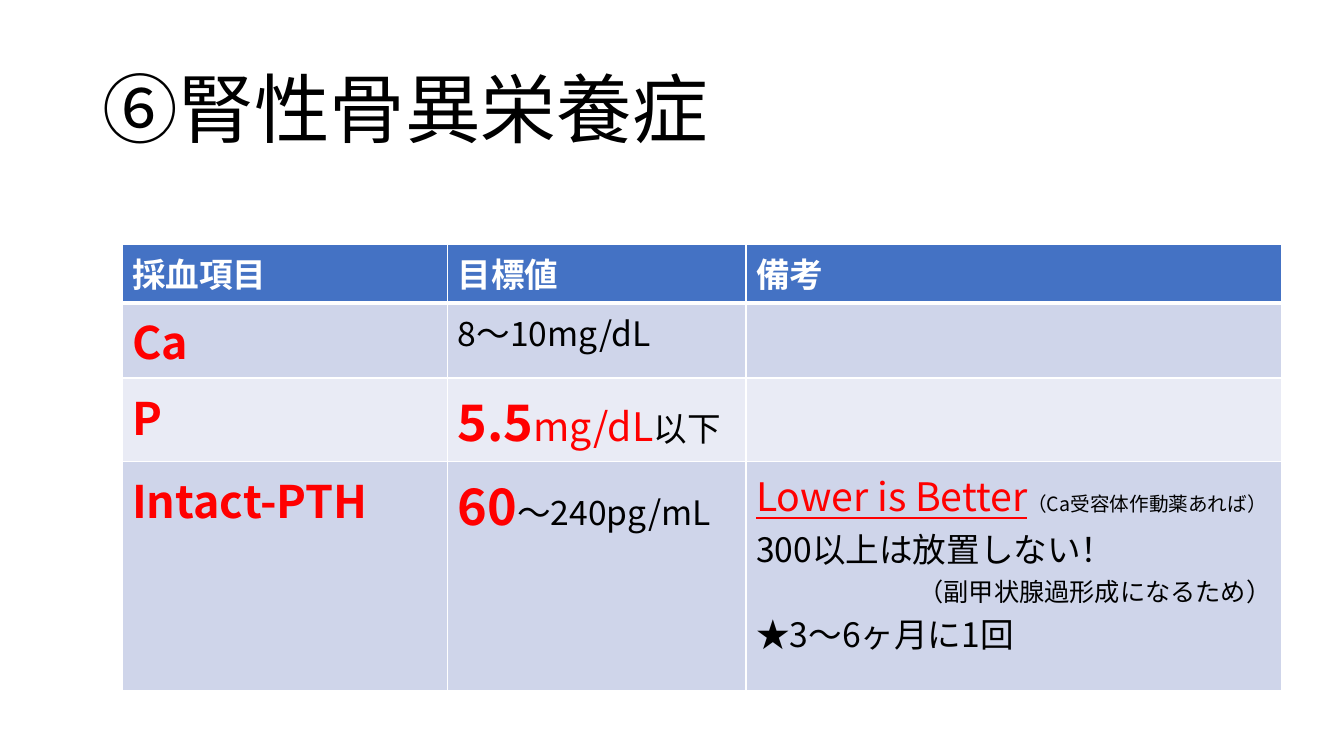
from lxml import etree
from pptx import Presentation
from pptx.dml.color import RGBColor
from pptx.enum.text import MSO_ANCHOR, MSO_AUTO_SIZE, PP_ALIGN
from pptx.oxml.ns import qn
from pptx.util import Emu, Pt

LEFT, RIGHT = PP_ALIGN.LEFT, PP_ALIGN.RIGHT
MIDDLE = MSO_ANCHOR.MIDDLE
NO_FIT = MSO_AUTO_SIZE.NONE
TITLE_ONLY = 5

PX = 9144  # 100 px to the inch
FONT = "Noto Sans CJK JP"
BLACK, WHITE, RED = "000000", "FFFFFF", "FF0000"
HEADER_FILL, BAND_FILLS = "4472C4", ("CFD5EA", "E9EBF5")

# Text formats
HEAD = dict(size=24, color=WHITE, bold=True)
ITEM = dict(size=32, color=RED, bold=True)
VALUE = dict(size=36, color=RED, bold=True)
UNIT = dict(size=28, color=RED)
SLOGAN = dict(size=28, color=RED, underline=True)
PLAIN = dict(size=24)
SMALL = dict(size=18)
TINY = dict(size=14)

# A cell is a list of paragraphs: (alignment, [(text, format), ...])
COLUMNS = (323, 296, 531)
ROWS = (58, 74, 83, 227)
CELLS = [
    [[(LEFT, [(name, HEAD)])] for name in ("採血項目", "目標値", "備考")],
    [[(LEFT, [("Ca", ITEM)])],
     [(LEFT, [("8〜10mg/dL", PLAIN)])],
     []],
    [[(LEFT, [("P", ITEM)])],
     [(LEFT, [("5.5", VALUE), ("mg/dL", UNIT), ("以下", PLAIN)])],
     []],
    [[(LEFT, [("Intact-PTH", ITEM)])],
     [(LEFT, [("60", VALUE), ("〜240pg/mL", PLAIN)])],
     [(LEFT, [("Lower is Better", SLOGAN), ("（Ca受容体作動薬あれば）", TINY)]),
      (LEFT, [("300以上は放置しない！", PLAIN)]),
      (RIGHT, [("（副甲状腺過形成になるため）", SMALL)]),
      (LEFT, [("★3〜6ヶ月に1回", PLAIN)])]],
]


def px(n):
    return Emu(n * PX)


def rgb(value):
    return RGBColor.from_string(value)


def add_run(p, text, size, color=BLACK, bold=False, underline=False):
    r = p.add_run()
    r.text = text
    formats = dict(name=FONT, size=Pt(size), bold=bold, underline=underline)
    for key, value in formats.items():
        setattr(r.font, key, value)
    r.font.color.rgb = rgb(color)
    ea = etree.SubElement(r.font._element, qn("a:ea"))
    ea.set("typeface", FONT)


def add_title(s, text, left, top, width, height):
    sp = s.shapes.title
    box = dict(left=left, top=top, width=width, height=height)
    for key, value in box.items():
        setattr(sp, key, px(value))
    tf = sp.text_frame
    for key, value in dict(auto_size=NO_FIT, vertical_anchor=MIDDLE, word_wrap=True).items():
        setattr(tf, key, value)
    p = tf.paragraphs[0]
    p.alignment, p.line_spacing = LEFT, 0.9
    add_run(p, text, 54)


def set_borders(cell, **widths):
    tcPr = cell._tc.get_or_add_tcPr()
    for side, width in widths.items():
        ln = etree.SubElement(tcPr, qn(f"a:ln{side}"), w=str(Pt(width)))
        fill = etree.SubElement(ln, qn("a:solidFill"))
        etree.SubElement(fill, qn("a:srgbClr"), val=WHITE)


def fill_cell(cell, paragraphs):
    tf = cell.text_frame
    for i, (alignment, runs) in enumerate(paragraphs):
        p = tf.add_paragraph() if i else tf.paragraphs[0]
        p.alignment = alignment
        for text, style in runs:
            add_run(p, text, **style)


def add_target_table(s, left, top):
    frame = s.shapes.add_table(len(ROWS), len(COLUMNS), px(left), px(top),
                               px(sum(COLUMNS)), px(sum(ROWS)))
    table = frame.table
    for column, width in zip(table.columns, COLUMNS):
        column.width = px(width)
    for i, (row, height) in enumerate(zip(table.rows, ROWS)):
        row.height = px(height)
        color = BAND_FILLS[(i - 1) % 2] if i else HEADER_FILL
        for cell, paragraphs in zip(row.cells, CELLS[i]):
            # A thick rule parts the header from the body
            set_borders(cell, L=1, R=1, T=3 if i == 1 else 1, B=1 if i else 3)
            cell.fill.solid()
            cell.fill.fore_color.rgb = rgb(color)
            fill_cell(cell, paragraphs)


def main():
    prs = Presentation()
    prs.slide_width, prs.slide_height = px(1333), px(750)
    s = prs.slides.add_slide(prs.slide_layouts[TITLE_ONLY])
    add_title(s, "⑥腎性骨異栄養症", 92, 40, 1150, 145)
    add_target_table(s, 121, 242)
    prs.save("out.pptx")


if __name__ == "__main__":
    main()
